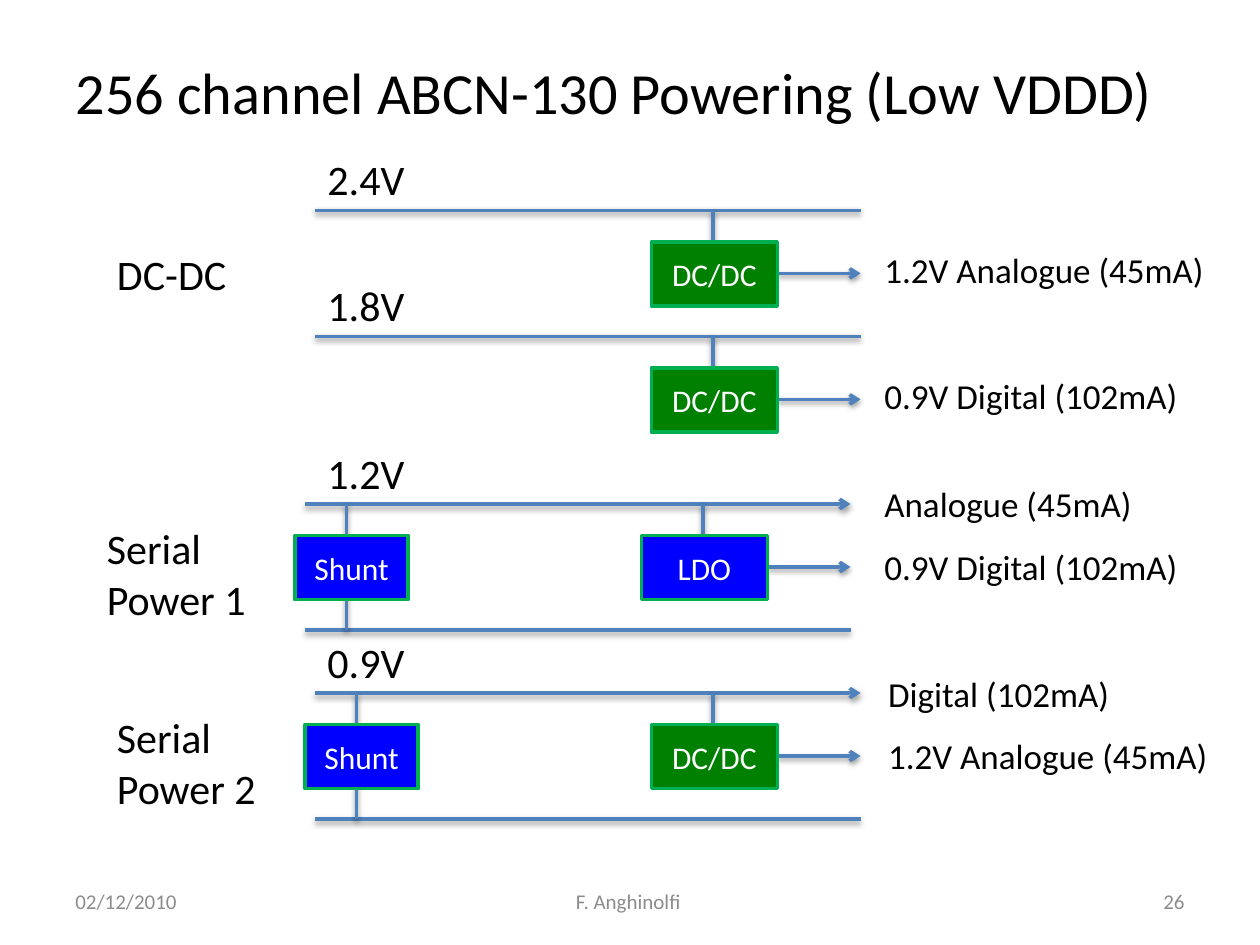
from lxml.etree import SubElement
from pptx import Presentation
from pptx.dml.color import RGBColor
from pptx.enum.shapes import MSO_CONNECTOR as Connector, MSO_SHAPE as Preset
from pptx.enum.text import MSO_ANCHOR as Anchor, MSO_AUTO_SIZE as AutoSize, PP_ALIGN as Align
from pptx.oxml.ns import qn
from pptx.util import Inches, Pt

FONT = "Calibri"
WIRE, BORDER, GREEN, BLUE = "4F81BD", "00B050", "008000", "0000FF"
BLACK, WHITE, GRAY = "000000", "FFFFFF", "8C8C8C"
STEP = 0.25
RAIL_LENGTH = 4.33


def color(value):
    """Turn a hex string into a colour."""
    return RGBColor.from_string(value)


def write(frame, lines, size, ink, align=Align.LEFT, anchor=Anchor.TOP, wrap=False):
    """Fill a text frame, one paragraph for each line."""
    frame.word_wrap = wrap
    frame.vertical_anchor = anchor
    for index, line in enumerate(lines):
        paragraph = frame.add_paragraph() if index else frame.paragraphs[0]
        paragraph.alignment = align
        run = paragraph.add_run()
        run.text = line
        run.font.name = FONT
        run.font.size = Pt(size)
        run.font.color.rgb = color(ink)


def add_title(slide, text):
    """Place and fill the title placeholder."""
    title = slide.shapes.title
    title.left, title.top, title.width, title.height = map(Inches, (0.5, 0.3, 9, 0.85))
    write(title.text_frame, [text], 33.3, BLACK, anchor=Anchor.MIDDLE, wrap=True)
    title.text_frame.auto_size = AutoSize.NONE


def add_label(slide, box, lines, size, ink=BLACK, **layout):
    """Add a text box."""
    shape = slide.shapes.add_textbox(*map(Inches, box))
    write(shape.text_frame, lines, size, ink, **layout)


def add_block(slide, left, top, width, name, fill):
    """Add a named circuit block."""
    block = slide.shapes.add_shape(Preset.RECTANGLE, *map(Inches, (left, top, width, 0.51)))
    block.shadow.inherit = False
    block.fill.solid()
    block.fill.fore_color.rgb = color(fill)
    block.line.color.rgb = color(BORDER)
    block.line.width = Pt(2)
    write(block.text_frame, [name], 18, WHITE, Align.CENTER, Anchor.MIDDLE)


def add_wire(slide, start, end, arrow=False):
    """Add a wire with a soft shadow and an optional arrowhead."""
    wire = slide.shapes.add_connector(Connector.STRAIGHT, *map(Inches, start + end))
    wire.line.color.rgb = color(WIRE)
    wire.line.width = Pt(2)
    properties = wire.element.spPr
    if arrow:
        SubElement(properties.find(qn("a:ln")), qn("a:tailEnd"), type="arrow")
    effects = SubElement(properties, qn("a:effectLst"))
    shadow = SubElement(effects, qn("a:outerShdw"), blurRad="40000", dist="20000",
                        dir="5400000", rotWithShape="0")
    black = SubElement(shadow, qn("a:srgbClr"), val=BLACK)
    SubElement(black, qn("a:alpha"), val="38000")


def add_supply(slide, left, top, voltage, block, fill, rail_arrow=False):
    """Add a supply rail that feeds a converter block with one output."""
    right = left + RAIL_LENGTH
    tap = left + 3.16
    add_wire(slide, (left, top), (right, top), rail_arrow)
    add_wire(slide, (tap, top + STEP), (tap, top))
    add_wire(slide, (left + 3.67, top + 2 * STEP), (right, top + 2 * STEP), True)
    add_block(slide, left + 2.67, top + STEP, 1, block, fill)
    add_label(slide, (2.5, top - 0.5, 0.82, 0.5), [voltage], 24)


def add_shunt(slide, left, top):
    """Add a return rail with a shunt across the supply."""
    bottom = top + 4 * STEP
    add_wire(slide, (left, bottom), (left + RAIL_LENGTH, bottom))
    add_wire(slide, (left + 0.33, bottom), (left + 0.33, top))
    add_block(slide, left - 0.08, top + STEP, 0.9, "Shunt", BLUE)


def add_footer(slide):
    """Add the date, the author and the slide number."""
    for left, width, text, align in (
        (0.5, 2.33, "02/12/2010", Align.LEFT),
        (3.42, 3.17, "F. Anghinolfi ", Align.CENTER),
        (7.17, 2.33, "26", Align.RIGHT),
    ):
        add_label(slide, (left, 6.95, width, 0.4), [text], 12, GRAY,
                  align=align, anchor=Anchor.MIDDLE, wrap=True)


def main():
    """Build the powering slide."""
    presentation = Presentation()
    presentation.slide_width, presentation.slide_height = Inches(10), Inches(7.5)
    slide = presentation.slides.add_slide(presentation.slide_layouts[5])
    add_title(slide, "256 channel ABCN-130 Powering (Low VDDD)")

    add_supply(slide, 2.5, 1.67, "2.4V", "DC/DC", GREEN)
    add_supply(slide, 2.5, 2.67, "1.8V", "DC/DC", GREEN)
    add_label(slide, (0.83, 1.92, 1.08, 0.5), ["DC-DC"], 24)

    for left, top, voltage, block, fill, number in (
        (2.42, 4, "1.2V", "LDO", BLUE, 1),
        (2.5, 5.5, "0.9V", "DC/DC", GREEN, 2),
    ):
        add_supply(slide, left, top, voltage, block, fill, True)
        add_shunt(slide, left, top)
        add_label(slide, (left - 1.67, top + 0.1, 1.33, 0.91),
                  ["Serial", f"Power {number}"], 24, wrap=True)

    for left, top, width, text in (
        (6.92, 1.92, 2.76, "1.2V Analogue (45mA)"),
        (6.92, 2.92, 2.55, "0.9V Digital (102mA)"),
        (6.92, 3.78, 2.18, "Analogue (45mA)"),
        (6.92, 4.28, 2.55, "0.9V Digital (102mA)"),
        (6.95, 5.29, 1.97, "Digital (102mA)"),
        (6.95, 5.78, 2.76, "1.2V Analogue (45mA)"),
    ):
        add_label(slide, (left, top, width, 0.44), [text], 20)

    add_footer(slide)
    presentation.save("out.pptx")


if __name__ == "__main__":
    main()
